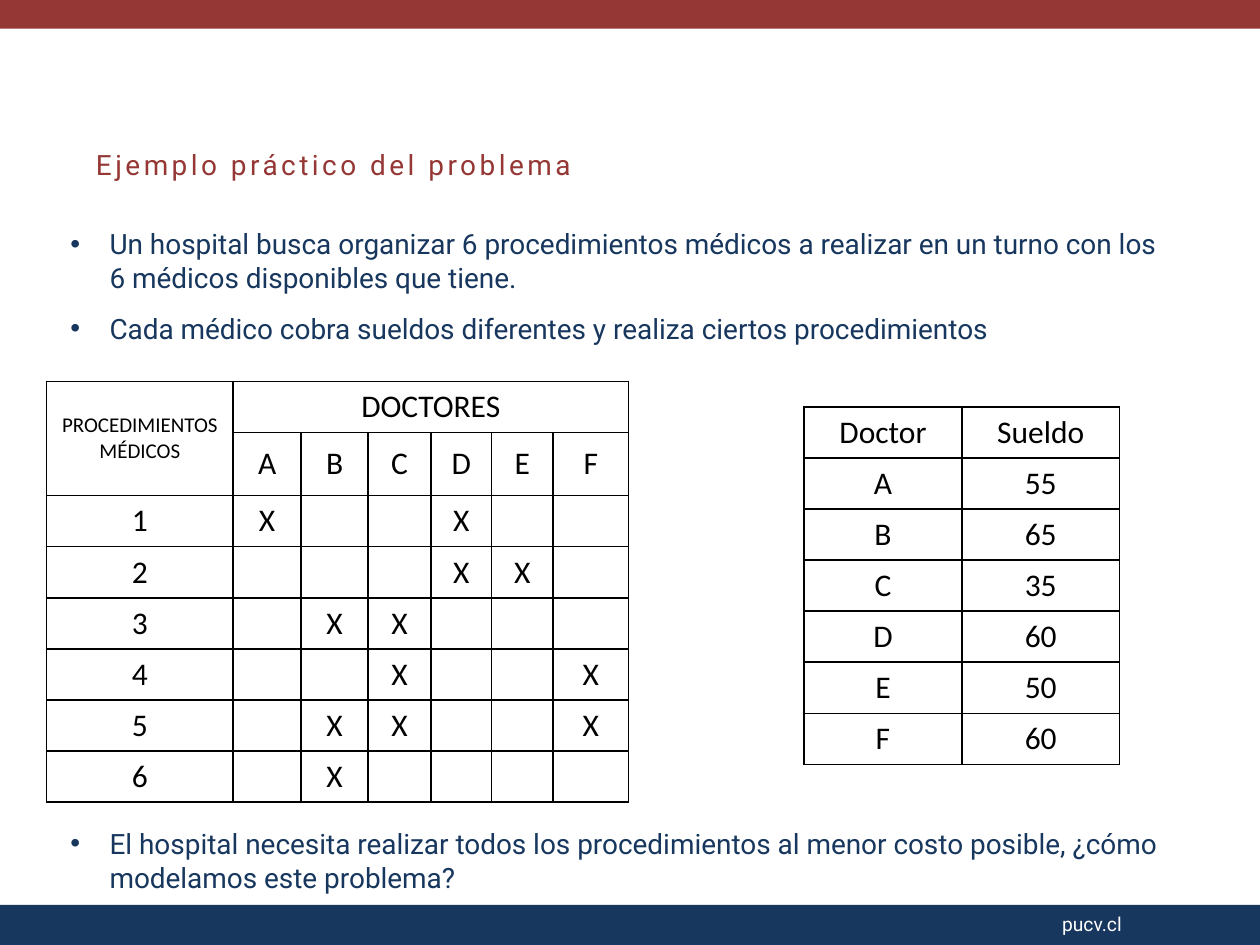
from dataclasses import dataclass

from lxml import etree
from pptx import Presentation
from pptx.dml.color import RGBColor
from pptx.enum.shapes import MSO_SHAPE
from pptx.enum.text import MSO_ANCHOR, MSO_AUTO_SIZE, PP_ALIGN
from pptx.oxml.ns import qn
from pptx.util import Cm, Pt

RECTANGLE = MSO_SHAPE.RECTANGLE
TOP, MIDDLE = MSO_ANCHOR.TOP, MSO_ANCHOR.MIDDLE
LEFT, CENTER = PP_ALIGN.LEFT, PP_ALIGN.CENTER
FIT_SHAPE = MSO_AUTO_SIZE.SHAPE_TO_FIT_TEXT

RED, NAVY, BLACK, WHITE = "953735", "17375E", "000000", "FFFFFF"
TITLE_ONLY = 5
ROW_HEIGHT = 1.03
BULLET_INDENT = 0.79

TITLE_FORMAT = {"name": "Roboto", "size": Pt(16), "color": RED}
BULLET_FORMAT = {"name": "Roboto", "size": Pt(16), "color": NAVY}
FOOTER_FORMAT = {"name": "Roboto", "size": Pt(11), "color": WHITE}
CELL_FORMAT = {"name": "Calibri", "size": Pt(18), "color": BLACK}
SMALL_CELL_FORMAT = {**CELL_FORMAT, "size": Pt(12)}


@dataclass(frozen=True)
class Box:
    left: float
    top: float
    width: float
    height: float

    def lengths(self) -> tuple:
        return Cm(self.left), Cm(self.top), Cm(self.width), Cm(self.height)


@dataclass(frozen=True)
class Bullet:
    text: str
    top: float
    height: float


@dataclass(frozen=True)
class Grid:
    left: float
    top: float
    widths: list[float]
    rows: list[list[str]]
    anchor: MSO_ANCHOR


def paint(color_format, hex_color: str) -> None:
    color_format.rgb = RGBColor.from_string(hex_color)


def format_font(font, values: dict) -> None:
    for name, value in values.items():
        if name == "color":
            paint(font.color, value)
        else:
            setattr(font, name, value)


def write(frame, text: str, values: dict):
    """Put one formatted span in the first paragraph and return it."""
    span = frame.paragraphs[0].add_run()
    span.text = text
    format_font(span.font, values)
    return span


def add_bar(page, box: Box, color: str) -> None:
    bar = page.shapes.add_shape(RECTANGLE, *box.lengths())
    bar.shadow.inherit = False
    bar.fill.solid()
    paint(bar.fill.fore_color, color)
    bar.line.fill.background()


def add_text(page, box: Box, text: str, values: dict):
    frame = page.shapes.add_textbox(*box.lengths()).text_frame
    frame.word_wrap = True
    write(frame, text, values)
    return frame


def add_bullet(page, bullet: Bullet) -> None:
    box = Box(1.17, bullet.top, 22.43, bullet.height)
    frame = add_text(page, box, bullet.text, BULLET_FORMAT)
    frame.auto_size = FIT_SHAPE
    properties = frame.paragraphs[0]._p.get_or_add_pPr()
    properties.set("marL", str(Cm(BULLET_INDENT)))
    properties.set("indent", str(-Cm(BULLET_INDENT)))
    etree.SubElement(properties, qn("a:buFont"), typeface="Arial")
    etree.SubElement(properties, qn("a:buChar"), char="•")


def add_borders(cell) -> None:
    properties = cell._tc.get_or_add_tcPr()
    for side in ("a:lnL", "a:lnR", "a:lnT", "a:lnB"):
        line = etree.SubElement(properties, qn(side), w=str(Pt(1)))
        fill = etree.SubElement(line, qn("a:solidFill"))
        etree.SubElement(fill, qn("a:srgbClr"), val=BLACK)


def add_grid(page, grid: Grid):
    box = Box(grid.left, grid.top, sum(grid.widths), ROW_HEIGHT * len(grid.rows))
    table = page.shapes.add_table(
        len(grid.rows), len(grid.widths), *box.lengths()).table
    table.first_row = table.horz_banding = False
    for column, width in zip(table.columns, grid.widths):
        column.width = Cm(width)
    for row, texts in zip(table.rows, grid.rows):
        row.height = Cm(ROW_HEIGHT)
        for cell, text in zip(row.cells, texts):
            add_borders(cell)
            cell.fill.background()
            cell.vertical_anchor = grid.anchor
            para = cell.text_frame.paragraphs[0]
            para.alignment = CENTER
            if text:
                write(cell.text_frame, text, CELL_FORMAT)
    return table


DOCTORS = "ABCDEF"
QUALIFIED = ["AD", "DE", "BC", "CF", "BCF", "B"]  # doctors for each procedure
SALARIES = [55, 65, 35, 60, 50, 60]

PROCEDURES = Grid(
    0.94, 7.69, [3.76, 1.37, 1.35, 1.27, 1.22, 1.24, 1.52],
    [["PROCEDIMIENTOS MÉDICOS", "DOCTORES"] + [""] * 5, ["", *DOCTORS]]
    + [[str(number)] + ["X" if doctor in able else "" for doctor in DOCTORS]
       for number, able in enumerate(QUALIFIED, 1)],
    MIDDLE)
PAY = Grid(
    16.21, 8.2, [3.18, 3.18],
    [["Doctor", "Sueldo"]]
    + [[doctor, str(salary)] for doctor, salary in zip(DOCTORS, SALARIES)],
    TOP)

BULLETS = [
    Bullet("Un hospital busca organizar 6 procedimientos médicos a realizar en "
           "un turno con los 6 médicos disponibles que tiene.", 4.45, 1.63),
    Bullet("Cada médico cobra sueldos diferentes y realiza ciertos "
           "procedimientos", 6.15, 0.94),
    Bullet("El hospital necesita realizar todos los procedimientos al menor "
           "costo posible, ¿cómo modelamos este problema?", 16.54, 1.63),
]


def main() -> None:
    deck = Presentation()
    deck.slide_width, deck.slide_height = Cm(25.4), Cm(19.05)
    page = deck.slides.add_slide(deck.slide_layouts[TITLE_ONLY])

    # Header and footer bars
    add_bar(page, Box(0, 18.24, 25.4, 0.81), NAVY)
    add_text(page, Box(21.16, 18.26, 4.2, 0.79), "pucv.cl", FOOTER_FORMAT)
    add_bar(page, Box(0, 0, 25.4, 0.58), RED)

    # Title
    title = page.shapes.title
    title.left, title.top, title.width, title.height = Box(
        1.68, 2.84, 11.28, 0.94).lengths()
    frame = title.text_frame
    frame.word_wrap = True
    frame.auto_size = FIT_SHAPE
    frame.vertical_anchor = TOP
    frame.paragraphs[0].alignment = LEFT
    span = write(frame, "Ejemplo práctico del problema", TITLE_FORMAT)
    span.font._element.set("spc", "200")

    # Statements
    for bullet in BULLETS:
        add_bullet(page, bullet)

    # Procedures by doctor, with merged headings
    table = add_grid(page, PROCEDURES)
    table.cell(0, 0).merge(table.cell(1, 0))
    table.cell(0, 1).merge(table.cell(0, 6))
    corner = table.cell(0, 0).text_frame.paragraphs[0]
    format_font(corner.runs[0].font, SMALL_CELL_FORMAT)

    # Salaries
    add_grid(page, PAY)

    deck.save("out.pptx")


if __name__ == "__main__":
    main()
